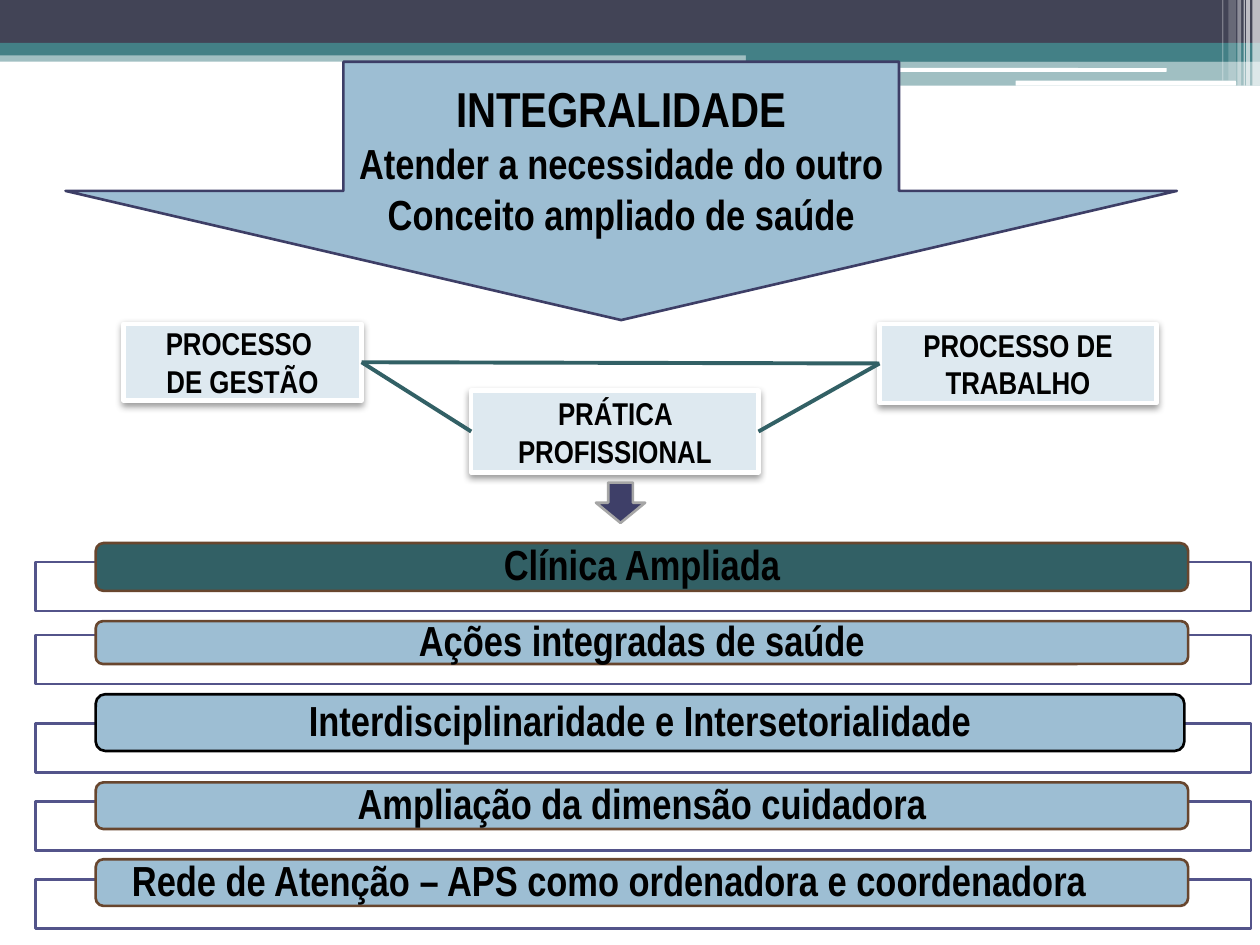
from collections import namedtuple

from lxml.etree import SubElement
from pptx import Presentation
from pptx.dml.color import RGBColor
from pptx.enum.shapes import MSO_CONNECTOR, MSO_SHAPE
from pptx.enum.text import MSO_ANCHOR, PP_ALIGN
from pptx.oxml.ns import qn
from pptx.util import Inches, Pt

# The slide is a grid of 100 columns by 75 rows of square cells.
CELL = 0.1
COLUMNS, ROWS = 100, 75
FONT = "Arial Narrow"
COLORS = {
    "slate": "424456", "teal": "438086", "deep_teal": "326065", "white": "FFFFFF",
    "black": "000000", "sky": "9DBED3", "pale": "DEE9F0", "navy": "3E3F68",
    "navy_line": "3D3E66", "violet": "53548A", "brown": "68462E", "gray": "A6A6A6",
}
SIDE_LEFT, SIDE_RIGHT = 1, 3  # connection sites of a rectangle

Box = namedtuple("Box", "left top width height")


def cells(count):
    return Inches(count * CELL)


def inside(box, left, top, width, height):
    """Give the box at an offset, in cells, from another box."""
    return Box(box.left + left, box.top + top, width, height)


def color(name):
    return RGBColor.from_string(COLORS[name])


def add_shape(slide, kind, box, fill, line=None, weight=1.5, opacity=100):
    shape = slide.shapes.add_shape(kind, *map(cells, box))
    shape.shadow.inherit = False
    shape.fill.solid()
    shape.fill.fore_color.rgb = color(fill)
    if opacity < 100:
        fill_color = shape.fill._xPr.find(qn("a:solidFill"))[0]
        SubElement(fill_color, qn("a:alpha"), val=str(opacity * 1000))
    if line:
        shape.line.color.rgb = color(line)
        shape.line.width = Pt(weight)
    else:
        shape.line.fill.background()
    return shape


def write(shape, lines, align=PP_ALIGN.CENTER, spacing=None, **frame_format):
    """Fill a shape with (text, size) lines in bold black."""
    frame = shape.text_frame
    frame_format = {"word_wrap": True, "vertical_anchor": MSO_ANCHOR.MIDDLE, **frame_format}
    for name, value in frame_format.items():
        setattr(frame, name, value)
    for index, (text, size) in enumerate(lines):
        paragraph = frame.paragraphs[0] if index == 0 else frame.add_paragraph()
        paragraph.alignment = align
        paragraph.line_spacing = spacing
        run = paragraph.add_run()
        run.text = text
        for name, value in {"name": FONT, "size": Pt(size), "bold": True}.items():
            setattr(run.font, name, value)
        run.font.color.rgb = color("black")


def add_soft_shadow(shape):
    effects = shape._element.spPr.find(qn("a:effectLst"))
    shadow = SubElement(effects, qn("a:outerShdw"), blurRad=str(Pt(4.1)),
                        dist=str(Pt(2)), dir="5400000", rotWithShape="0")
    shadow_color = SubElement(shadow, qn("a:srgbClr"), val=COLORS["black"])
    SubElement(shadow_color, qn("a:alpha"), val="40000")


def add_header(slide, box):
    split = 59.2
    rest = box.width - split
    bands = [
        (0, 4, box.width, 0.9, "teal", 50),
        (0, 0, box.width, 3.4, "slate", 100),
        (0, 3.4, box.width, 1, "teal", 100),
        (split, 3.9, rest, 1, "teal", 100),
        (split, 4.8, rest, 2, "teal", 50),
    ]
    for *offsets, fill, opacity in bands:
        add_shape(slide, MSO_SHAPE.RECTANGLE, inside(box, *offsets), fill, opacity=opacity)

    for offsets in [(59.1, 5.4, 33.5, 0.3), (80.6, 6.4, 17.5, 0.4)]:
        add_shape(slide, MSO_SHAPE.ROUNDED_RECTANGLE, inside(box, *offsets), "white")

    stripes = [
        (99.4, 0.6, 6.8, 65), (98.9, 0.3, 6.8, 65), (98.7, 0.1, 6.8, 60),
        (98.2, 0.3, 6.8, 40), (97.5, 0.6, 6.4, 20), (97, 0.1, 6.4, 30),
    ]
    for left, width, height, opacity in stripes:
        add_shape(slide, MSO_SHAPE.RECTANGLE, inside(box, left, 0, width, height),
                  "white", opacity=opacity)


def add_process_triangle(slide, box):
    """Three linked process boxes with a small arrow below."""
    entries = [
        ((60, 0, 22, 6.3), ["PROCESSO DE TRABALHO"]),
        ((0, 0, 18.9, 6.1), ["PROCESSO ", "DE GESTÃO"]),
        ((27.6, 5.3, 22.8, 6.5), ["PRÁTICA PROFISSIONAL"]),
    ]
    process_boxes = []
    for offsets, lines in entries:
        shape = add_shape(slide, MSO_SHAPE.RECTANGLE, inside(box, *offsets),
                          "pale", "white", 2.5)
        add_soft_shadow(shape)
        write(shape, [(line, 18) for line in lines])
        process_boxes.append(shape)

    work, management, practice = process_boxes
    for start, end in [(management, practice), (practice, work), (management, work)]:
        connector = slide.shapes.add_connector(MSO_CONNECTOR.STRAIGHT, 0, 0, 0, 0)
        connector.begin_connect(start, SIDE_RIGHT)
        connector.end_connect(end, SIDE_LEFT)
        connector.line.color.rgb = color("deep_teal")
        connector.line.width = Pt(2.25)
        SubElement(connector._element.spPr, qn("a:effectLst"))

    add_shape(slide, MSO_SHAPE.DOWN_ARROW, inside(box, 37.5, 12.6, 3.9, 3.2), "navy", "gray")


def add_action_list(slide, box):
    """Framed bars: bar top, bar height, frame top and bar width in cells."""
    center, left = PP_ALIGN.CENTER, PP_ALIGN.LEFT
    actions = [
        ("Clínica Ampliada", 0, 3.8, 1.5, 86.7, "deep_teal", "brown", center),
        ("Ações integradas de saúde", 6.2, 3.4, 7.3, 86.7, "sky", "brown", center),
        ("Interdisciplinaridade e Intersetorialidade", 12, 4.5, 14.3, 86.4, "sky", "black", center),
        ("Ampliação da dimensão cuidadora", 19, 3.7, 20.5, 86.7, "sky", "brown", center),
        ("Rede de Atenção – APS como ordenadora e coordenadora",
         25.1, 3.7, 26.7, 86.7, "sky", "brown", left),
    ]
    for text, top, height, frame_top, width, fill, line, align in actions:
        add_shape(slide, MSO_SHAPE.RECTANGLE, inside(box, 0, frame_top, box.width, 3.9),
                  "white", "violet", opacity=90)
        bar = add_shape(slide, MSO_SHAPE.ROUNDED_RECTANGLE,
                        inside(box, 4.8, top, width, height), fill, line)
        write(bar, [(text, 24)], align, 0.9, margin_left=cells(2.7),
              margin_right=cells(2.7), margin_top=0, margin_bottom=0)


def add_title_arrow(slide, box):
    arrow = add_shape(slide, MSO_SHAPE.DOWN_ARROW, box, "sky", "navy_line")
    write(arrow, [("INTEGRALIDADE", 28), ("Atender a necessidade do outro", 24),
                  ("Conceito ampliado de saúde", 24)])


def main():
    presentation = Presentation()
    presentation.slide_width = cells(COLUMNS)
    presentation.slide_height = cells(ROWS)
    slide = presentation.slides.add_slide(presentation.slide_layouts[6])
    add_header(slide, Box(0, 0, COLUMNS, 6.8))
    add_process_triangle(slide, Box(9.8, 25.7, 82, 15.8))
    add_action_list(slide, Box(2.8, 43.1, 96.5, 30.6))
    add_title_arrow(slide, Box(5.2, 4.9, 88.2, 20.5))
    presentation.save("out.pptx")


if __name__ == "__main__":
    main()
